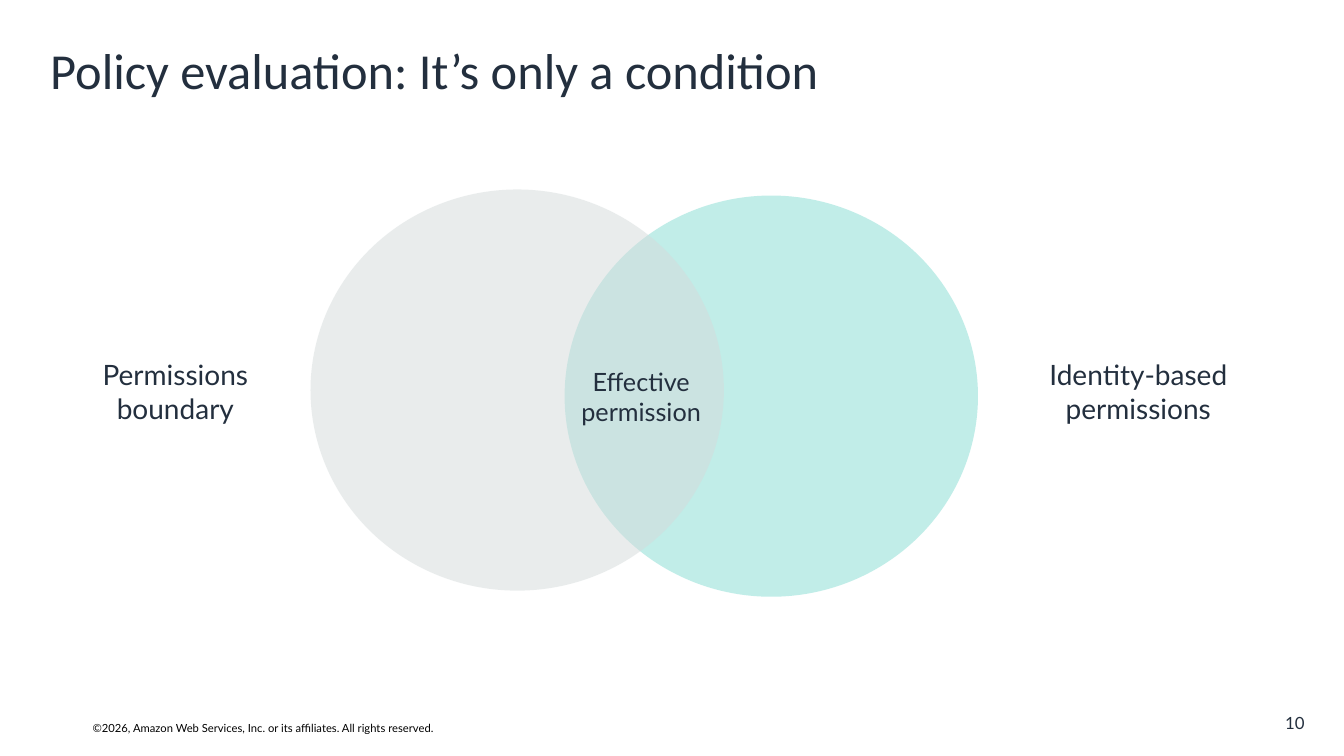
from dataclasses import dataclass

from lxml.etree import SubElement
from pptx import Presentation
from pptx.dml.color import RGBColor
from pptx.enum.shapes import MSO_SHAPE
from pptx.enum.text import MSO_ANCHOR, PP_ALIGN
from pptx.oxml.ns import qn
from pptx.util import Inches, Pt


@dataclass(frozen=True)
class Theme:
    ink: str = "232F3E"
    black: str = "000000"
    boundary: str = "D5DBDB"
    identity: str = "84DDD3"
    opacity: int = 50
    heading_font: str = "Calibri"
    body_font: str = "Lato"
    title_size: int = 36
    label_size: int = 20
    overlap_size: int = 18
    number_size: int = 12
    copyright_size: int = 8


THEME = Theme()


def add_text(shapes, box, text, size, color=THEME.ink, font=THEME.body_font,
             align=PP_ALIGN.LEFT, anchor=MSO_ANCHOR.TOP, margins=(0.1, 0.05),
             wrap=True, line_spacing=None):
    sp = shapes.add_textbox(*map(Inches, box))
    tf = sp.text_frame
    tf.word_wrap = wrap
    tf.vertical_anchor = anchor
    tf.margin_left = tf.margin_right = Inches(margins[0])
    tf.margin_top = tf.margin_bottom = Inches(margins[1])
    p = tf.paragraphs[0]
    p.alignment = align
    p.line_spacing = line_spacing
    r = p.add_run()
    r.text = text
    r.font.name = font
    r.font.size = Pt(size)
    r.font.color.rgb = RGBColor.from_string(color)


def add_circle(shapes, box, color):
    sp = shapes.add_shape(MSO_SHAPE.OVAL, *map(Inches, box))
    sp.shadow.inherit = False
    sp.line.fill.background()
    sp.fill.solid()
    sp.fill.fore_color.rgb = RGBColor.from_string(color)
    clr = sp.fill._xPr.find(qn("a:solidFill"))[0]
    SubElement(clr, qn("a:alpha"), val=str(THEME.opacity * 1000))


def add_title(s, box, text):
    add_text(s.shapes, box, text, THEME.title_size, font=THEME.heading_font,
             anchor=MSO_ANCHOR.MIDDLE, line_spacing=0.9)


def add_venn(s, box):
    x, y, w, h = box
    shapes = s.shapes.add_group_shape().shapes
    circle_w, circle_h = 4.1, 3.98
    add_circle(shapes, (x + 5.01, y + h - circle_h, circle_w, circle_h),
               THEME.identity)
    add_circle(shapes, (x + 2.49, y, circle_w, circle_h), THEME.boundary)
    add_text(shapes, (x + 4.74, y + 1.57, 2.06, 0.97), "Effective permission",
             THEME.overlap_size, align=PP_ALIGN.CENTER,
             anchor=MSO_ANCHOR.MIDDLE, margins=(0.09, 0.09))
    left_w, right_w = 2.3, 2.92
    for label_x, label_w, label in (
        (x + w - right_w, right_w, "Identity-based permissions"),
        (x, left_w, "Permissions boundary"),
    ):
        add_text(shapes, (label_x, y + 1.62, label_w, 0.77), label,
                 THEME.label_size, align=PP_ALIGN.CENTER)


def add_footer(s, box, number):
    x, y, w, h = box
    add_text(s.shapes, (x, y + 0.06, 3.74, 0.24),
             "©2026, Amazon Web Services, Inc. or its affiliates. All rights reserved.",
             THEME.copyright_size, color=THEME.black, wrap=False)
    number_w = 0.53
    add_text(s.shapes, (x + w - number_w, y, number_w, 0.25), number,
             THEME.number_size, align=PP_ALIGN.RIGHT,
             anchor=MSO_ANCHOR.MIDDLE, margins=(0, 0))


def main():
    prs = Presentation()
    prs.slide_width, prs.slide_height = Inches(13.33), Inches(7.5)
    s = prs.slides.add_slide(prs.slide_layouts[6])
    add_title(s, (0.4, 0.33, 12.54, 0.8),
              "Policy evaluation: It’s only a condition")
    add_venn(s, (0.59, 1.88, 12.16, 4.04))
    add_footer(s, (0.82, 7.05, 12.12, 0.3), "10")
    prs.save("out.pptx")


if __name__ == "__main__":
    main()
